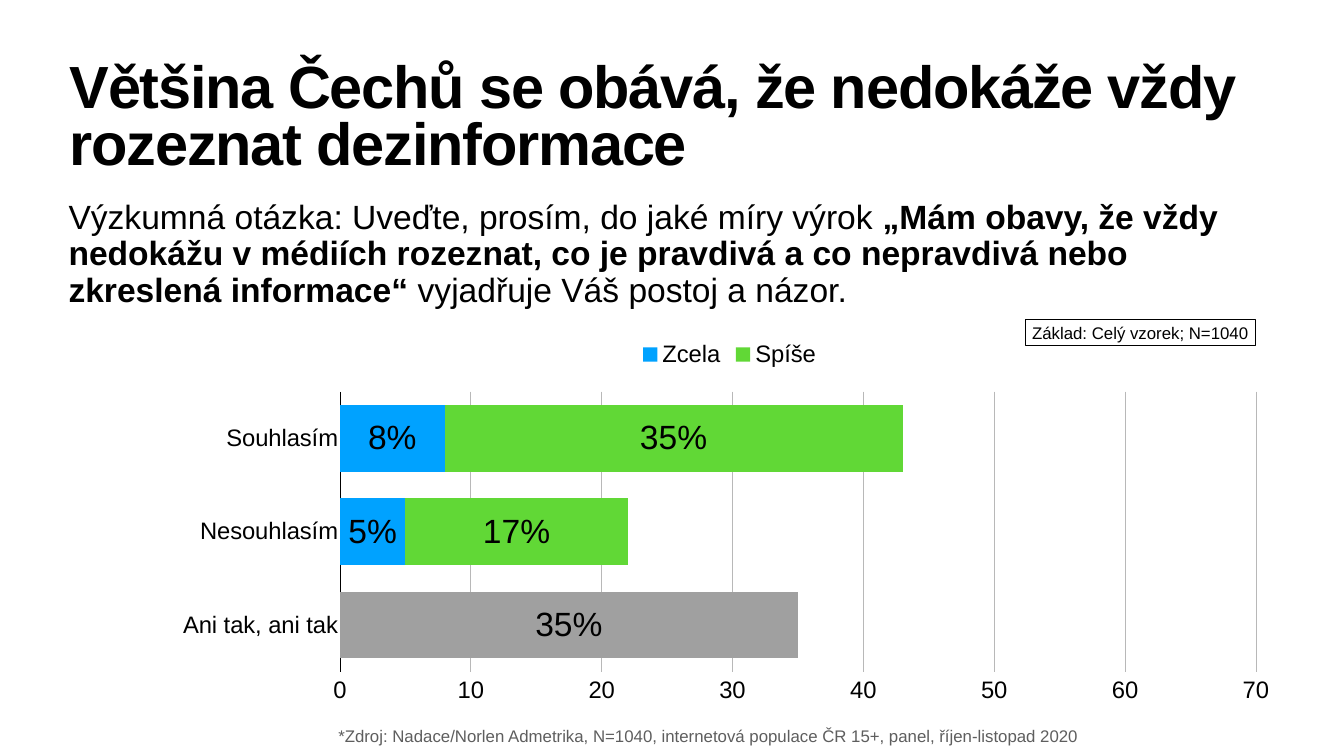
"""Build a survey slide with a question and a stacked bar chart."""
from lxml import etree
from pptx import Presentation
from pptx.chart.data import CategoryChartData
from pptx.dml.color import RGBColor
from pptx.enum.chart import (XL_AXIS_CROSSES, XL_CHART_TYPE, XL_LABEL_POSITION,
                             XL_LEGEND_POSITION, XL_TICK_LABEL_POSITION,
                             XL_TICK_MARK)
from pptx.enum.shapes import MSO_SHAPE
from pptx.enum.text import MSO_ANCHOR, MSO_AUTO_SIZE, PP_ALIGN
from pptx.oxml.ns import qn
from pptx.util import Inches, Pt

BAR = XL_CHART_TYPE.BAR_STACKED
MAX = XL_AXIS_CROSSES.MAXIMUM
HIGH = XL_TICK_LABEL_POSITION.HIGH
NONE = XL_TICK_MARK.NONE
MID = XL_LABEL_POSITION.CENTER
TOP_KEY = XL_LEGEND_POSITION.TOP
RECT = MSO_SHAPE.RECTANGLE
TOP, MIDDLE = MSO_ANCHOR.TOP, MSO_ANCHOR.MIDDLE
FIXED = MSO_AUTO_SIZE.NONE
LEFT, CENTER = PP_ALIGN.LEFT, PP_ALIGN.CENTER

HUES = {"ink": "000000", "note": "5E5E5E", "grid": "B8B8B8",
        "blue": "00A2FF", "green": "61D836", "gray": "A0A0A0"}
INK, NOTE, GRID, BLUE, GREEN, GRAY = map(RGBColor.from_string, HUES.values())


def style(font, size, hue=INK, bold=False):
    font.name, font.size, font.bold = "Arial", Pt(size), bold
    font.color.rgb = hue


def place(shape, box, anchor=TOP, inset=0.06):
    shape.left, shape.top, shape.width, shape.height = map(Inches, box)
    frame = shape.text_frame
    frame.word_wrap, frame.auto_size = True, FIXED
    frame.vertical_anchor = anchor
    frame.margin_left = frame.margin_right = Inches(inset)
    frame.margin_top = frame.margin_bottom = Inches(0.06)
    return frame.paragraphs[0]


deck = Presentation()
deck.slide_width, deck.slide_height = Inches(26.67), Inches(15)
slide = deck.slides.add_slide(deck.slide_layouts[1])
shapes = slide.shapes

head = place(shapes.title, (1.32, 1.18, 24.71, 2.71))
head.text = "Většina Čechů se obává, že nedokáže vždy rozeznat dezinformace"
head.alignment, head.line_spacing = LEFT, 0.8
style(head.runs[0].font, 85, bold=True)
head.runs[0].font._element.set("spc", "-170")

body = place(slide.placeholders[1], (1.3, 3.92, 24.03, 9.03))
body.line_spacing, body.space_before = 0.9, Pt(45)
props = body._p.get_or_add_pPr()
props.set("marL", "0")
props.set("indent", "0")
etree.SubElement(props, qn("a:buNone"))
for text, bold in [
    ("Výzkumná otázka: Uveďte, prosím, do jaké míry výrok ", False),
    ("„Mám obavy, že vždy nedokážu v médiích rozeznat, co je pravdivá "
     "a co nepravdivá nebo zkreslená informace“", True),
    (" vyjadřuje Váš postoj a názor.", False),
]:
    run = body.add_run()
    run.text = text
    style(run.font, 48, bold=bold)

data = CategoryChartData()
data.categories = ["Souhlasím", "Nesouhlasím", "Ani tak, ani tak"]
data.add_series("Zcela", (8, 5, 35))
data.add_series("Spíše", (35, 17, None))
area = map(Inches, (1.32, 6.36, 24.01, 7.8))
chart = shapes.add_chart(BAR, *area, data).chart
chart.has_title = False
style(chart.font, 10, NOTE)

plot = chart.plots[0]
plot.gap_width, plot.overlap, plot.vary_by_categories = 40, 100, False
for series, hue in zip(plot.series, (BLUE, GREEN)):
    series.format.fill.solid()
    series.format.fill.fore_color.rgb = hue
    labels = series.data_labels
    labels.show_value, labels.position = True, MID
    labels.number_format, labels.number_format_is_linked = '#,##0"%"', False
    style(labels.font, 48)
fill = plot.series[0].points[2].format.fill
fill.solid()
fill.fore_color.rgb = GRAY

cats, vals = chart.category_axis, chart.value_axis
for axis in (cats, vals):
    axis.major_tick_mark = axis.minor_tick_mark = NONE
    style(axis.tick_labels.font, 34)
cats.reverse_order, cats.crosses = True, MAX
cats.format.line.color.rgb, cats.format.line.width = INK, Pt(1)
vals.minimum_scale, vals.maximum_scale, vals.major_unit = 0, 70, 10
vals.tick_label_position = HIGH
vals.tick_labels.number_format = "#,##0"
vals.tick_labels.number_format_is_linked = False
vals.format.line.fill.background()
grid = vals.major_gridlines.format.line
grid.color.rgb, grid.width = GRID, Pt(1)

chart.has_legend = True
key = chart.legend
key.position, key.include_in_layout = TOP_KEY, True
style(key.font, 34)

room = chart._chartSpace.chart.plotArea
for owner, spot, parts in [
    (room, 0, {"layoutTarget": "inner", "xMode": "edge", "yMode": "edge",
               "x": 0.226, "y": 0.181, "w": 0.757, "h": 0.712}),
    (key._element, 1, {"xMode": "edge", "yMode": "edge", "x": 0.47, "y": 0.04}),
]:
    for old in owner.findall(qn("c:layout")):
        owner.remove(old)
    layout = etree.Element(qn("c:layout"))
    manual = etree.SubElement(layout, qn("c:manualLayout"))
    for tag, val in parts.items():
        etree.SubElement(manual, qn("c:" + tag)).set("val", str(val))
    owner.insert(spot, layout)

badge = shapes.add_shape(RECT, 0, 0, 0, 0)
badge.shadow.inherit = False
badge.fill.background()
badge.line.color.rgb, badge.line.width = INK, Pt(1)
source = shapes.add_textbox(0, 0, 0, 0)
for shape, box, anchor, inset, hue, text in [
    (badge, (20.34, 6.34, 4.57, 0.52), MIDDLE, 0.06, INK,
     "Základ: Celý vzorek; N=1040"),
    (source, (6.31, 14.34, 15.48, 0.5), TOP, 0.1, NOTE,
     "*Zdroj: Nadace/Norlen Admetrika, N=1040, internetová populace ČR 15+, "
     "panel, říjen-listopad 2020"),
]:
    line = place(shape, box, anchor, inset)
    line.text, line.alignment = text, CENTER
    style(line.runs[0].font, 24, hue)

deck.save("out.pptx")
